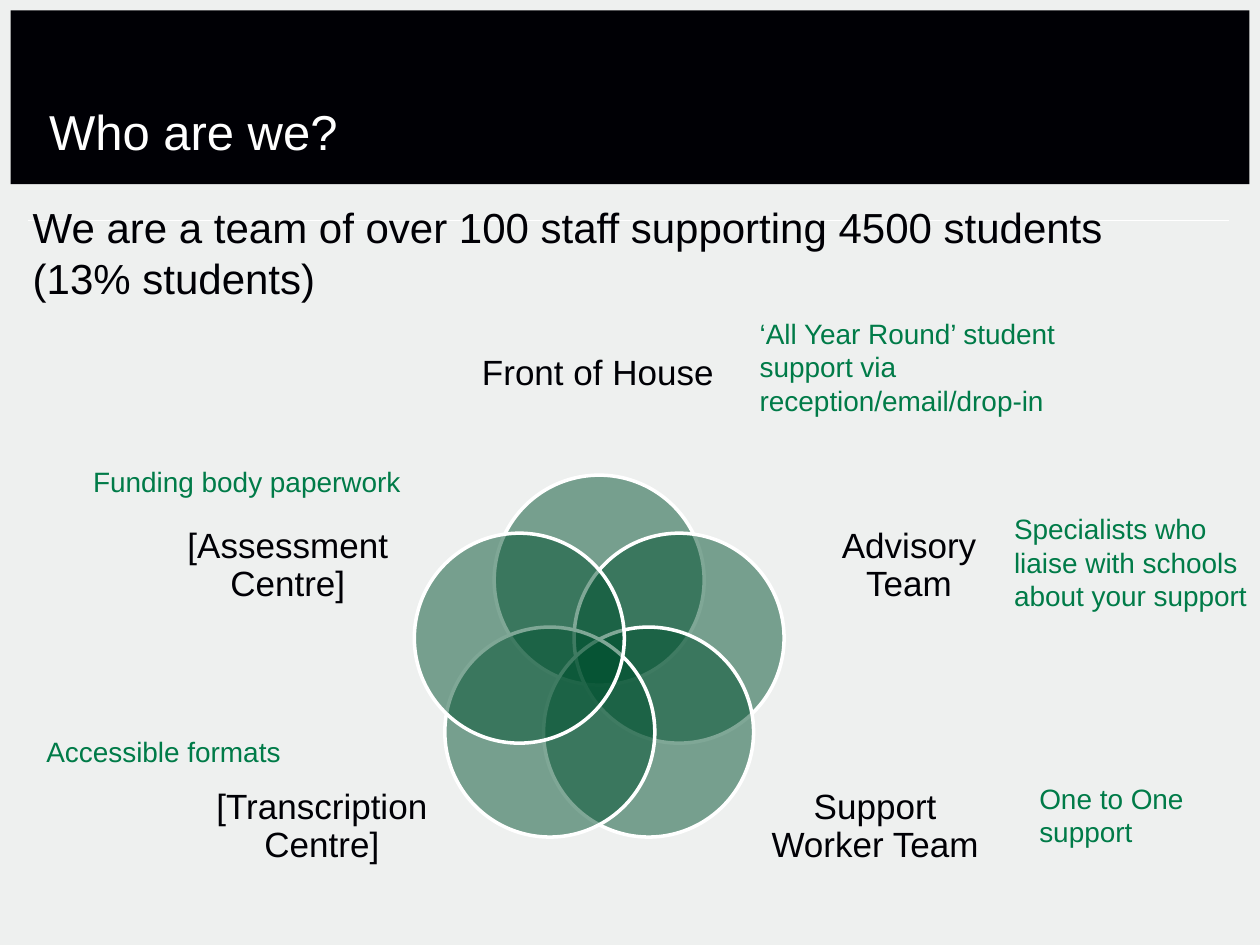
from dataclasses import dataclass
from math import cos, radians, sin

from lxml.etree import SubElement
from pptx import Presentation
from pptx.dml.color import RGBColor
from pptx.enum.shapes import MSO_CONNECTOR, MSO_SHAPE
from pptx.enum.text import MSO_ANCHOR, MSO_AUTO_SIZE, PP_ALIGN
from pptx.oxml.ns import qn
from pptx.slide import Slide
from pptx.text.text import TextFrame
from pptx.util import Pt

BACKGROUND = RGBColor(0xEE, 0xF0, 0xEF)
INK = RGBColor(0x00, 0x00, 0x05)
WHITE = RGBColor(0xFF, 0xFF, 0xFF)
PETAL_GREEN = RGBColor(0x00, 0x50, 0x2F)
NOTE_GREEN = RGBColor(0x00, 0x7B, 0x48)

RING_X, RING_Y, RING_RADIUS = 342.4, 379.5, 48
PETAL_SIZE = 120


@dataclass(frozen=True)
class Label:
    text: str
    left: float
    top: float
    width: float
    height: float


TEAMS = [
    Label("Front of House", 272.2, 173.5, 139, 80.6),
    Label("Advisory Team", 457.2, 280.1, 124.6, 87.1),
    Label("Support Worker Team", 437.8, 429.1, 124.6, 87.1),
    Label("[Transcription Centre]", 121.7, 429.1, 124.6, 87.1),
    Label("[Assessment Centre]", 102.2, 280.1, 124.6, 87.1),
]
NOTES = [
    Label("‘All Year Round’ student support via reception/email/drop-in", 427, 177.1, 223.9, 65.5),
    Label("Specialists who liaise with schools about your support", 572.4, 288.7, 156.2, 65.5),
    Label("One to One support", 586.8, 442.8, 147.6, 46),
    Label("Accessible formats", 19.4, 416.2, 207.4, 26.6),
    Label("Funding body paperwork", 46.1, 262.1, 223.9, 26.6),
]


def write_text(frame: TextFrame, text: str, size: float, color: RGBColor) -> None:
    frame.word_wrap = True
    frame.text = text
    font = frame.paragraphs[0].font
    font.name = "Arial"
    font.size = Pt(size)
    font.color.rgb = color


def clear_margins(frame: TextFrame) -> None:
    frame.margin_left = frame.margin_right = Pt(0)
    frame.margin_top = frame.margin_bottom = Pt(0)


def add_label(page: Slide, label: Label, size: float, color: RGBColor) -> TextFrame:
    box = page.shapes.add_textbox(
        Pt(label.left), Pt(label.top), Pt(label.width), Pt(label.height)
    )
    write_text(box.text_frame, label.text, size, color)
    return box.text_frame


def add_header(page: Slide) -> None:
    title = page.shapes.title
    title.left, title.top, title.width, title.height = Pt(28.1), Pt(33.1), Pt(383.8), Pt(58.3)
    frame = title.text_frame
    write_text(frame, "Who are we?", 28, WHITE)
    clear_margins(frame)
    frame.auto_size = MSO_AUTO_SIZE.NONE
    frame.vertical_anchor = MSO_ANCHOR.BOTTOM
    frame.paragraphs[0].alignment = PP_ALIGN.LEFT

    banner = page.shapes.add_shape(MSO_SHAPE.RECTANGLE, Pt(6), Pt(6), Pt(708), Pt(99.2))
    banner.shadow.inherit = False
    banner.fill.solid()
    banner.fill.fore_color.rgb = INK
    banner.line.fill.background()

    rule = page.shapes.add_connector(MSO_CONNECTOR.STRAIGHT, Pt(15.8), Pt(126), Pt(702), Pt(126))
    rule.line.color.rgb = WHITE
    rule.line.width = Pt(0.75)
    SubElement(rule.element.spPr, qn("a:effectLst"))

    title.element.addprevious(banner.element)
    title.element.addprevious(rule.element)


def add_petal(page: Slide, index: int) -> None:
    angle = radians(72 * index)
    left = RING_X + RING_RADIUS * sin(angle) - PETAL_SIZE / 2
    top = RING_Y - RING_RADIUS * cos(angle) - PETAL_SIZE / 2
    petal = page.shapes.add_shape(
        MSO_SHAPE.OVAL, Pt(left), Pt(top), Pt(PETAL_SIZE), Pt(PETAL_SIZE)
    )
    petal.shadow.inherit = False
    petal.fill.solid()
    petal.fill.fore_color.rgb = PETAL_GREEN
    color = petal.element.spPr.find(qn("a:solidFill")).find(qn("a:srgbClr"))
    SubElement(color, qn("a:alpha"), val="50000")
    petal.line.color.rgb = WHITE
    petal.line.width = Pt(2)


def add_team(page: Slide, team: Label) -> None:
    frame = add_label(page, team, 20, INK)
    clear_margins(frame)
    frame.vertical_anchor = MSO_ANCHOR.MIDDLE
    para = frame.paragraphs[0]
    para.alignment = PP_ALIGN.CENTER
    para.line_spacing = 0.9


def main() -> None:
    deck = Presentation()
    deck.slide_width, deck.slide_height = Pt(720), Pt(540)
    page = deck.slides.add_slide(deck.slide_layouts.get_by_name("Title Only"))
    page.background.fill.solid()
    page.background.fill.fore_color.rgb = BACKGROUND

    add_header(page)
    summary = Label(
        "We are a team of over 100 staff supporting 4500 students (13% students)",
        18.7, 115.2, 663.8, 354.2,
    )
    clear_margins(add_label(page, summary, 24, INK))
    for index, team in enumerate(TEAMS):
        add_petal(page, index)
        add_team(page, team)
    for note in NOTES:
        add_label(page, note, 16, NOTE_GREEN).auto_size = MSO_AUTO_SIZE.SHAPE_TO_FIT_TEXT

    deck.save("out.pptx")


if __name__ == "__main__":
    main()
